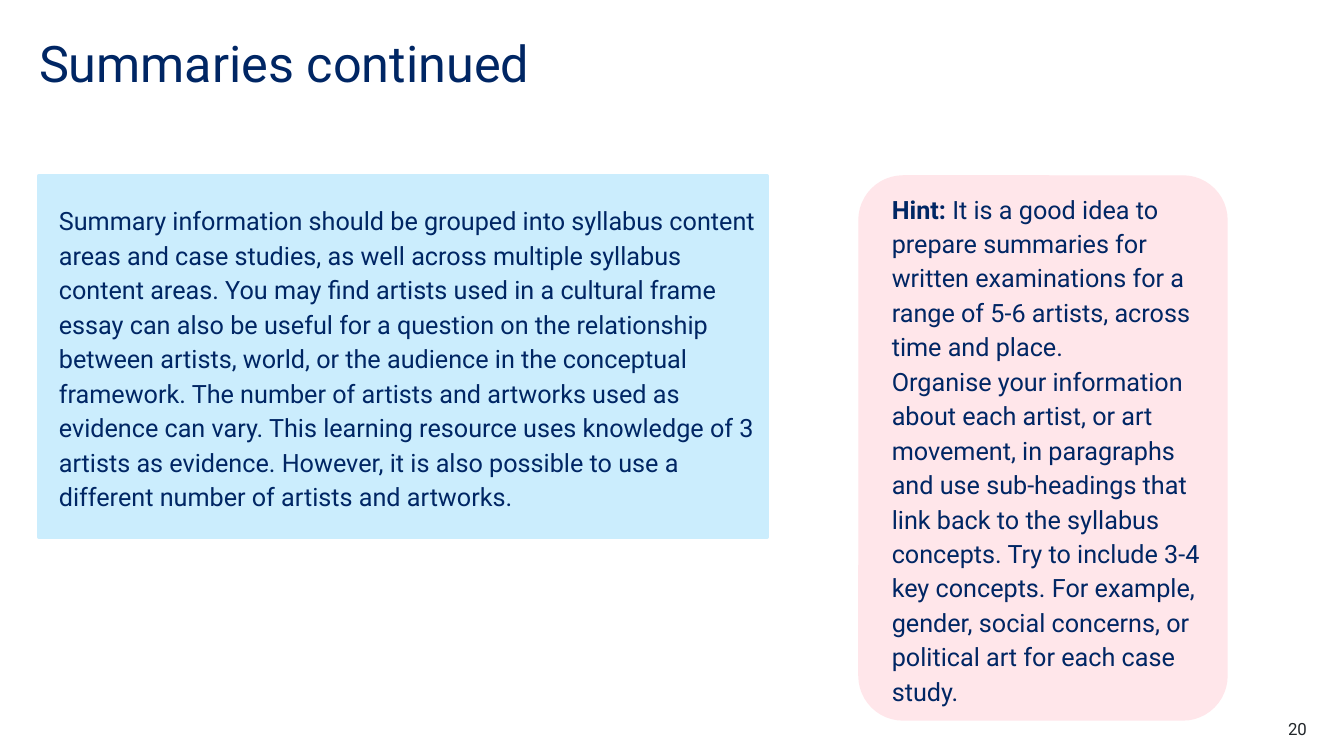
from dataclasses import dataclass

from pptx import Presentation
from pptx import util as u
from pptx.dml.color import RGBColor
from pptx.enum import shapes, text


@dataclass(frozen=True)
class Theme:
    font: str = "Roboto"
    navy: str = "002664"
    grey: str = "22272B"
    blue: str = "CBEDFD"
    pink: str = "FFE6EA"
    title_size: int = 36
    body_size: int = 18
    number_size: int = 12


THEME = Theme()
PX = 914400 / 100.8
SLIDE_SIZE = (1344, 756)

# Content: each paragraph is a list of (words, bold) runs
TITLE = [[("Summaries continued", False)]]
SUMMARY = [[(
    "Summary information should be grouped into syllabus content areas and case "
    "studies, as well across multiple syllabus content areas. You may find artists "
    "used in a cultural frame essay can also be useful for a question on the "
    "relationship between artists, world, or the audience in the conceptual "
    "framework. The number of artists and artworks used as evidence can vary. This "
    "learning resource uses knowledge of 3 artists as evidence. However, it is also "
    "possible to use a different number of artists and artworks.", False)]]
HINT = [
    [("Hint:", True),
     (" It is a good idea to prepare summaries for written examinations for a range "
      "of 5-6 artists, across time and place.", False)],
    [("Organise your information about each artist, or art movement, in paragraphs "
      "and use sub-headings that link back to the syllabus concepts. Try to include "
      "3-4 key concepts. For example, gender, social concerns, or political art for "
      "each case study.", False)],
]
PAGE_NUMBER = [[("20", False)]]

# Layout: left, top, width, height in px
LEFT, PANEL_TOP = 39, 176
TITLE_BOX = (LEFT, 39, 1111, 111)
SUMMARY_BOX = (LEFT, PANEL_TOP, 728, 361)
HINT_BOX = (859, PANEL_TOP, 368, 544)
NUMBER_BOX = (1227, 719, 80, 20)
TEXT_INDENT = 10


def emu(px):
    return u.Emu(round(px * PX))


def write(shape, paragraphs, size, color, align=text.PP_ALIGN.LEFT, spacing=1.0, indent=0):
    frame = shape.text_frame
    frame.word_wrap = True
    for index, runs in enumerate(paragraphs):
        paragraph = frame.add_paragraph() if index else frame.paragraphs[0]
        paragraph.alignment = align
        paragraph.line_spacing = spacing
        if indent:
            paragraph._p.get_or_add_pPr().set("marL", str(emu(indent)))
        for words, bold in runs:
            run = paragraph.add_run()
            run.text = words
            run.font.name = THEME.font
            run.font.size = u.Pt(size)
            run.font.bold = bold
            run.font.color.rgb = RGBColor.from_string(color)


def add_label(slide, box, paragraphs, size, color, **style):
    shape = slide.shapes.add_textbox(*map(emu, box))
    frame = shape.text_frame
    frame.margin_left = frame.margin_right = frame.margin_top = frame.margin_bottom = 0
    write(shape, paragraphs, size, color, **style)


def add_panel(slide, kind, box, color, line_width, paragraphs):
    shape = slide.shapes.add_shape(kind, *map(emu, box))
    shape.shadow.inherit = False
    shape.fill.solid()
    shape.fill.fore_color.rgb = RGBColor.from_string(color)
    shape.line.color.rgb = RGBColor.from_string(color)
    shape.line.width = u.Pt(line_width)
    shape.text_frame.vertical_anchor = text.MSO_ANCHOR.MIDDLE
    write(shape, paragraphs, THEME.body_size, THEME.navy, spacing=1.14, indent=TEXT_INDENT)
    return shape


def main():
    presentation = Presentation()
    presentation.slide_width, presentation.slide_height = map(emu, SLIDE_SIZE)
    slide = presentation.slides.add_slide(presentation.slide_layouts[6])

    # Title
    add_label(slide, TITLE_BOX, TITLE, THEME.title_size, THEME.navy, spacing=0.9)

    # Summary and hint panels
    add_panel(slide, shapes.MSO_SHAPE.RECTANGLE, SUMMARY_BOX, THEME.blue, 3, SUMMARY)
    hint = add_panel(slide, shapes.MSO_SHAPE.ROUNDED_RECTANGLE, HINT_BOX, THEME.pink, 1, HINT)
    hint.adjustments[0] = 0.12

    # Page number
    add_label(slide, NUMBER_BOX, PAGE_NUMBER, THEME.number_size, THEME.grey,
              align=text.PP_ALIGN.RIGHT)

    presentation.save("out.pptx")


if __name__ == "__main__":
    main()
